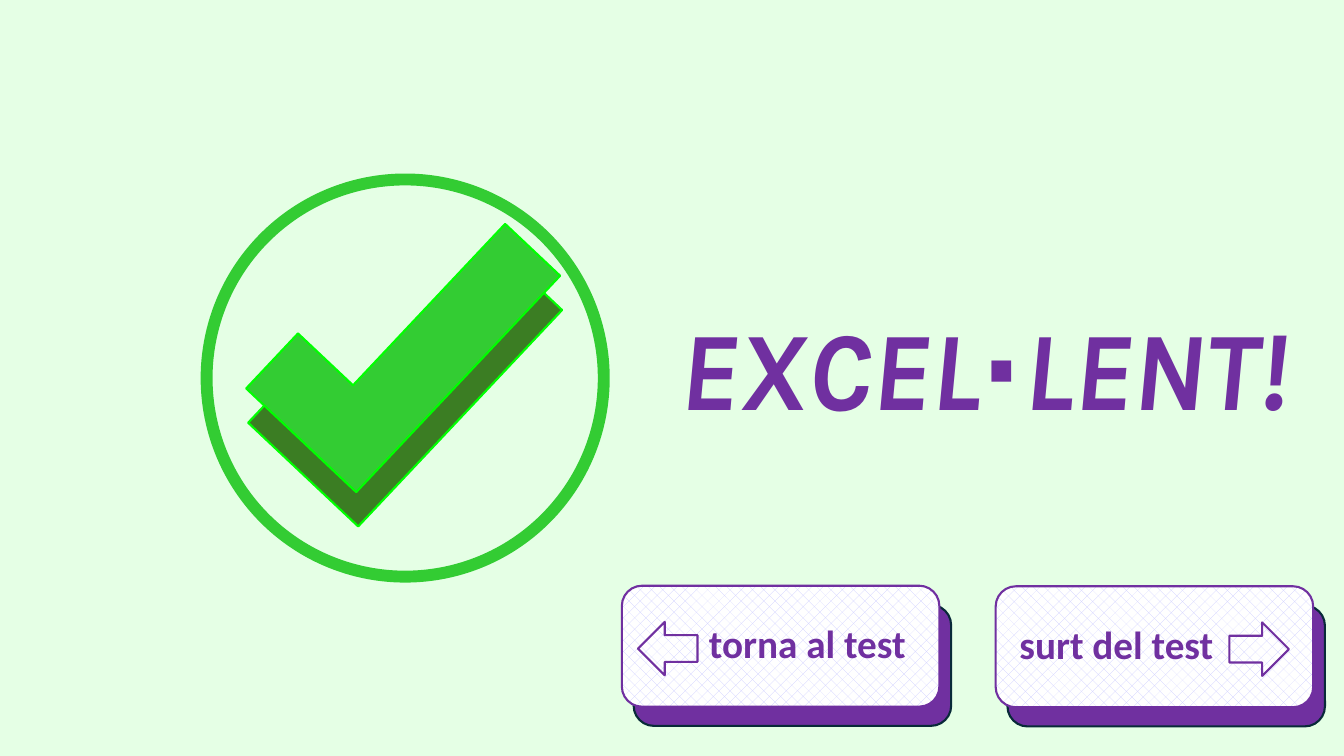
from lxml.etree import SubElement
from pptx import Presentation
from pptx.dml.color import RGBColor
from pptx.enum.dml import MSO_PATTERN
from pptx.enum.shapes import MSO_SHAPE
from pptx.enum.text import MSO_ANCHOR, MSO_AUTO_SIZE, PP_ALIGN
from pptx.oxml.ns import qn
from pptx.util import Pt

COLOURS = {
    "mint": "E5FFE5",
    "purple": "7030A0",
    "navy": "092A39",
    "green": "33CC33",
    "dark green": "3B7D23",
    "lime": "00FF00",
    "lilac": "CCCCFF",
    "white": "FFFFFF",
}


def colour(name):
    return RGBColor.from_string(COLOURS[name])


class Page:
    def __init__(self, deck):
        self.slide = deck.slides.add_slide(deck.slide_layouts[6])
        background = self.slide.background.fill
        background.solid()
        background.fore_color.rgb = colour("mint")

    def shape(self, kind, left, top, width, height, line, weight=1.5,
              fill=None, rotation=0, flip=False):
        shape = self.slide.shapes.add_shape(
            kind, Pt(left), Pt(top), Pt(width), Pt(height))
        shape.shadow.inherit = False
        shape.rotation = rotation
        if flip:
            shape._element.spPr.find(qn("a:xfrm")).set("flipH", "1")
        if fill:
            shape.fill.solid()
            shape.fill.fore_color.rgb = colour(fill)
        else:
            shape.fill.background()
        shape.line.color.rgb = colour(line)
        shape.line.width = Pt(weight)
        return shape

    def span(self, para, text, font, size):
        span = para.add_run()
        span.text = text
        span.font.name = font
        span.font.size = Pt(size)
        span.font.bold = True
        span.font.color.rgb = colour("purple")
        return span

    def title(self, left, top, width, height, parts):
        box = self.slide.shapes.add_textbox(
            Pt(left), Pt(top), Pt(width), Pt(height))
        box.text_frame.word_wrap = False
        box.text_frame.auto_size = MSO_AUTO_SIZE.SHAPE_TO_FIT_TEXT
        para = box.text_frame.paragraphs[0]
        para.alignment = PP_ALIGN.CENTER
        for text, font in parts:
            span = self.span(para, text, font, 80)
            span.font.italic = True
            properties = span.font._element
            outline = SubElement(properties, qn("a:ln"), w=str(Pt(1)))
            paint = SubElement(outline, qn("a:solidFill"))
            SubElement(paint, qn("a:srgbClr"), val=COLOURS["purple"])
            properties.insert(0, outline)

    def button(self, left, top, text, indent, arrow_offset, flip):
        width, height = 226.8, 86.4
        self.shape(MSO_SHAPE.ROUNDED_RECTANGLE, left + 8.4, top + 13.7,
                   width, height, "navy", fill="purple")
        face = self.shape(MSO_SHAPE.ROUNDED_RECTANGLE, left, top,
                          width, height, "purple")
        face.fill.patterned()
        face.fill.pattern = MSO_PATTERN.PERCENT_25
        face.fill.fore_color.rgb = colour("lilac")
        face.fill.back_color.rgb = colour("white")
        frame = face.text_frame
        frame.word_wrap = True
        frame.vertical_anchor = MSO_ANCHOR.MIDDLE
        frame.margin_left = Pt(indent)
        para = frame.paragraphs[0]
        para.alignment = PP_ALIGN.LEFT
        para.line_spacing = 0.9
        para.space_before = Pt(10)
        self.span(para, text, "Calibri", 28)
        self.shape(MSO_SHAPE.LEFT_ARROW, left + arrow_offset, top + 25.8,
                   42.5, 38.2, "purple", flip=flip)

    def check(self, left, top, fill):
        self.shape(MSO_SHAPE.CORNER, left, top, 108, 212.4, "lime",
                   fill=fill, rotation=43.3, flip=True)


def main():
    deck = Presentation()
    deck.slide_width, deck.slide_height = Pt(960), Pt(540)
    page = Page(deck)
    page.check(235.4, 155.5, "dark green")
    page.title(446.4, 209.5, 512.6, 104.4,
               [("EXCEL", "Karla"), ("∙", "Comic Neue"), ("LENT!", "Karla")])
    page.shape(MSO_SHAPE.FLOWCHART_CONNECTOR, 147.6, 128.2, 283.7, 283.7,
               "green", weight=8.5)
    page.check(234, 131, "green")
    page.button(444.2, 418.4, "torna al test", 58, 11.5, False)
    page.button(711.2, 418.8, "surt del test", 12.8, 167, True)
    deck.save("out.pptx")


if __name__ == "__main__":
    main()
